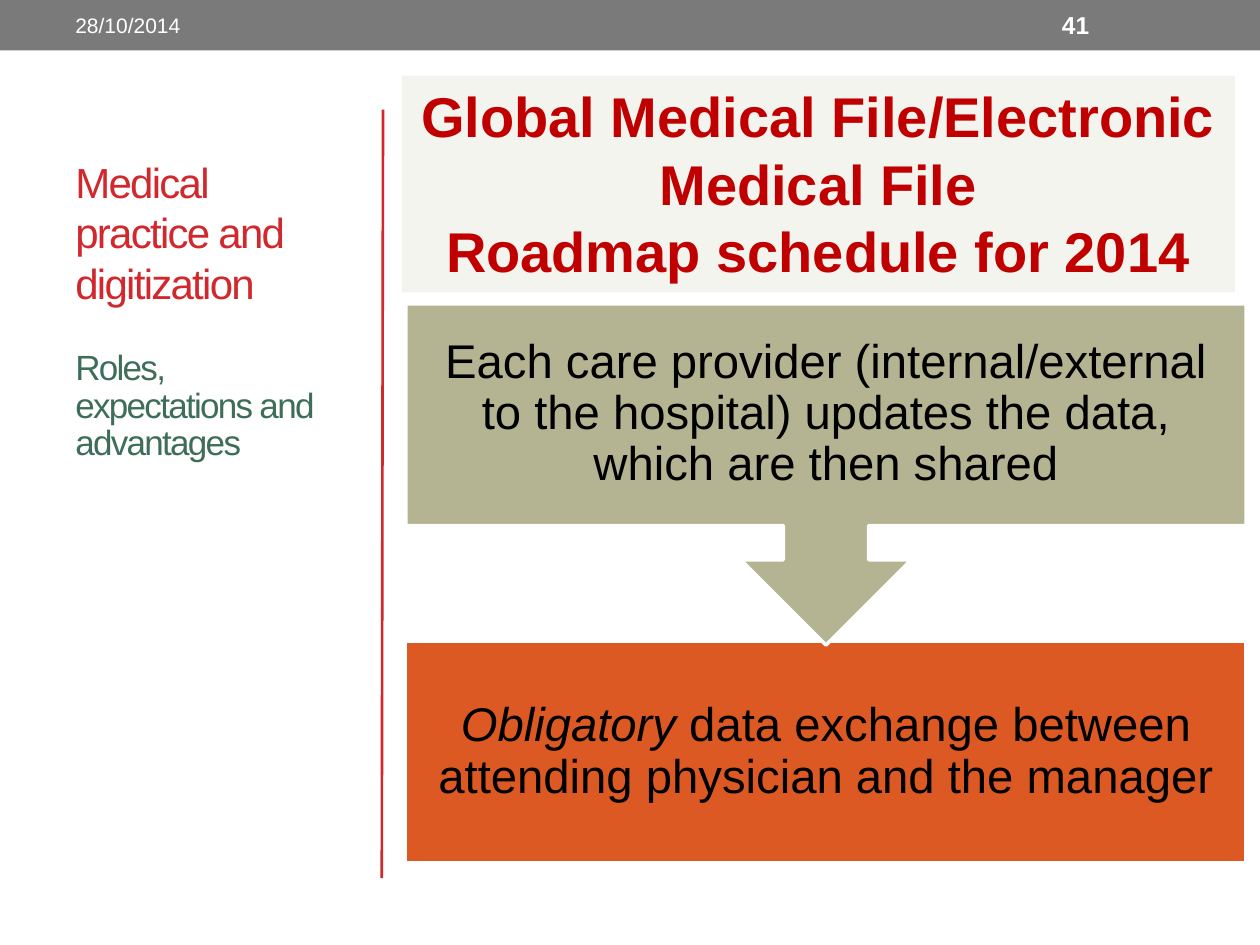
from lxml.etree import SubElement
from pptx import Presentation
from pptx.dml.color import RGBColor
from pptx.enum.shapes import MSO_CONNECTOR, MSO_SHAPE as SHAPE
from pptx.enum.text import MSO_ANCHOR as ANCHOR, PP_ALIGN as ALIGN
from pptx.oxml.ns import qn
from pptx.util import Inches, Pt

COLORS = {
    "band": "7A7A7A", "red": "D1282E", "green": "3E6E5A", "white": "FFFFFF",
    "black": "000000", "orange": "DC5924", "olive": "B4B392",
    "cream": "F4F4EF", "heading": "C00000",
}

deck = Presentation()
deck.slide_width, deck.slide_height = Inches(10), Inches(7.5)
page = deck.slides.add_slide(deck.slide_layouts[6])


def add_block(kind, area, fill, outline=None):
    shape = page.shapes.add_shape(kind, *map(Inches, area))
    shape.shadow.inherit = False
    shape.fill.solid()
    shape.fill.fore_color.rgb = RGBColor.from_string(COLORS[fill])
    if outline:
        shape.line.color.rgb = RGBColor.from_string(COLORS[outline])
        shape.line.width = Pt(2.08)
    else:
        shape.line.fill.background()
    return shape


def write(box, paragraphs, size, color, anchor=ANCHOR.TOP, align=ALIGN.LEFT,
          line_spacing=1.0, tracking=0, inset=None, bold=False):
    """Each paragraph is a list of (text, italic) spans."""
    frame = box.text_frame
    frame.word_wrap = True
    frame.vertical_anchor = anchor
    if inset:
        for side in ("left", "top", "right", "bottom"):
            setattr(frame, f"margin_{side}", Inches(inset))
    for index, spans in enumerate(paragraphs):
        para = frame.add_paragraph() if index else frame.paragraphs[0]
        para.alignment = align
        para.line_spacing = line_spacing
        for text, italic in spans:
            span = para.add_run()
            span.text = text
            values = {"name": "Arial", "size": Pt(size), "bold": bold, "italic": italic}
            for name, value in values.items():
                setattr(span.font, name, value)
            span.font.color.rgb = RGBColor.from_string(COLORS[color])
            if tracking:
                span.font._element.set("spc", str(tracking * 100))


# Top band and vertical divider
add_block(SHAPE.RECTANGLE, (0, 0, 10, 0.4), "band")
divider = page.shapes.add_connector(
    MSO_CONNECTOR.STRAIGHT, Inches(3.04), Inches(0.87), Inches(3.03), Inches(6.97))
divider.line.color.rgb = RGBColor.from_string(COLORS["red"])
divider.line.width = Pt(1.5)
SubElement(divider._element.spPr, qn("a:effectLst"))

# Flow blocks: the callout points down at the result
step_left, step_width, step_height = 3.22, 6.67, 1.76
provider_top, exchange_top = 2.41, 5.09
add_block(SHAPE.RECTANGLE, (step_left, exchange_top, step_width, step_height),
          "orange", "white")
callout = add_block(SHAPE.UP_ARROW_CALLOUT, (step_left, provider_top, step_width, 2.71),
                    "olive", "white")
callout.rotation = 180

# Side title, subtitle, date, page number and flow texts
step_format = {"size": 27, "color": "black", "anchor": ANCHOR.MIDDLE,
               "align": ALIGN.CENTER, "line_spacing": 0.9, "inset": 0.21}
texts = [
    ((0.5, 0.87, 2.34, 1.62), [("Medical practice and digitization", False)],
     {"size": 24, "color": "red", "anchor": ANCHOR.BOTTOM, "tracking": -1}),
    ((0.5, 2.73, 2.34, 4.24), [("Roles, expectations and advantages", False)],
     {"size": 20, "color": "green", "line_spacing": 0.9, "tracking": -1}),
    ((0.5, 0.02, 3.17, 0.36), [("28/10/2014", False)],
     {"size": 12, "color": "white", "anchor": ANCHOR.MIDDLE}),
    ((8.33, 0.02, 1.17, 0.36), [("41", False)],
     {"size": 14, "color": "white", "anchor": ANCHOR.MIDDLE, "bold": True}),
    ((step_left, provider_top, step_width, step_height),
     [("Each care provider (internal/external to the hospital) updates the data, "
       "which are then shared", False)], step_format),
    ((step_left, exchange_top, step_width, step_height),
     [("Obligatory", True),
      (" data exchange between attending physician and the manager", False)], step_format),
]
for area, spans, text_format in texts:
    write(page.shapes.add_textbox(*map(Inches, area)), [spans], **text_format)

# Main heading
heading = add_block(SHAPE.RECTANGLE, (3.19, 0.6, 6.61, 1.72), "cream")
write(heading,
      [[("Global Medical File/Electronic Medical File", False)],
       [("Roadmap schedule for 2014", False)]],
      size=32, color="heading", align=ALIGN.CENTER, bold=True)

deck.save("out.pptx")
